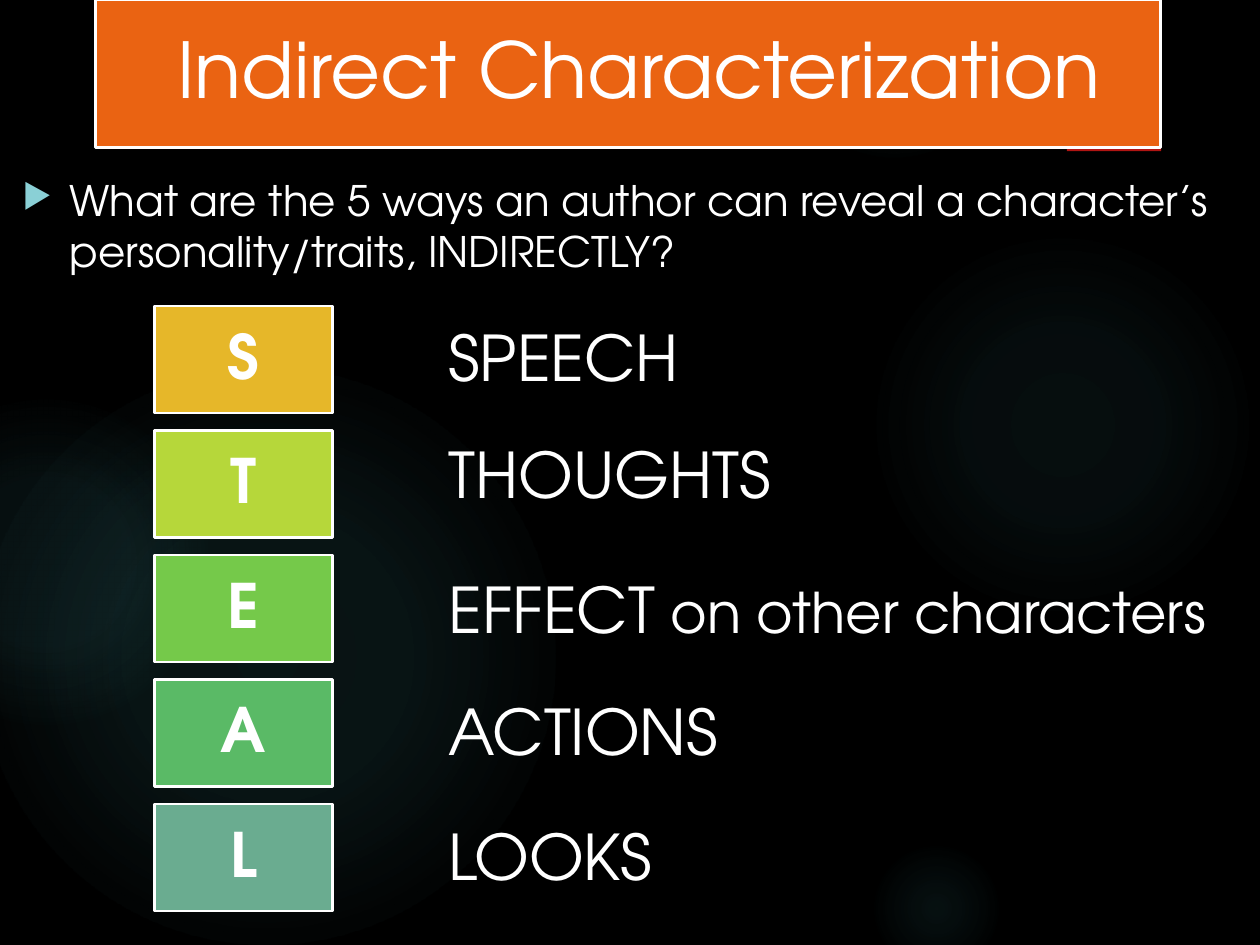
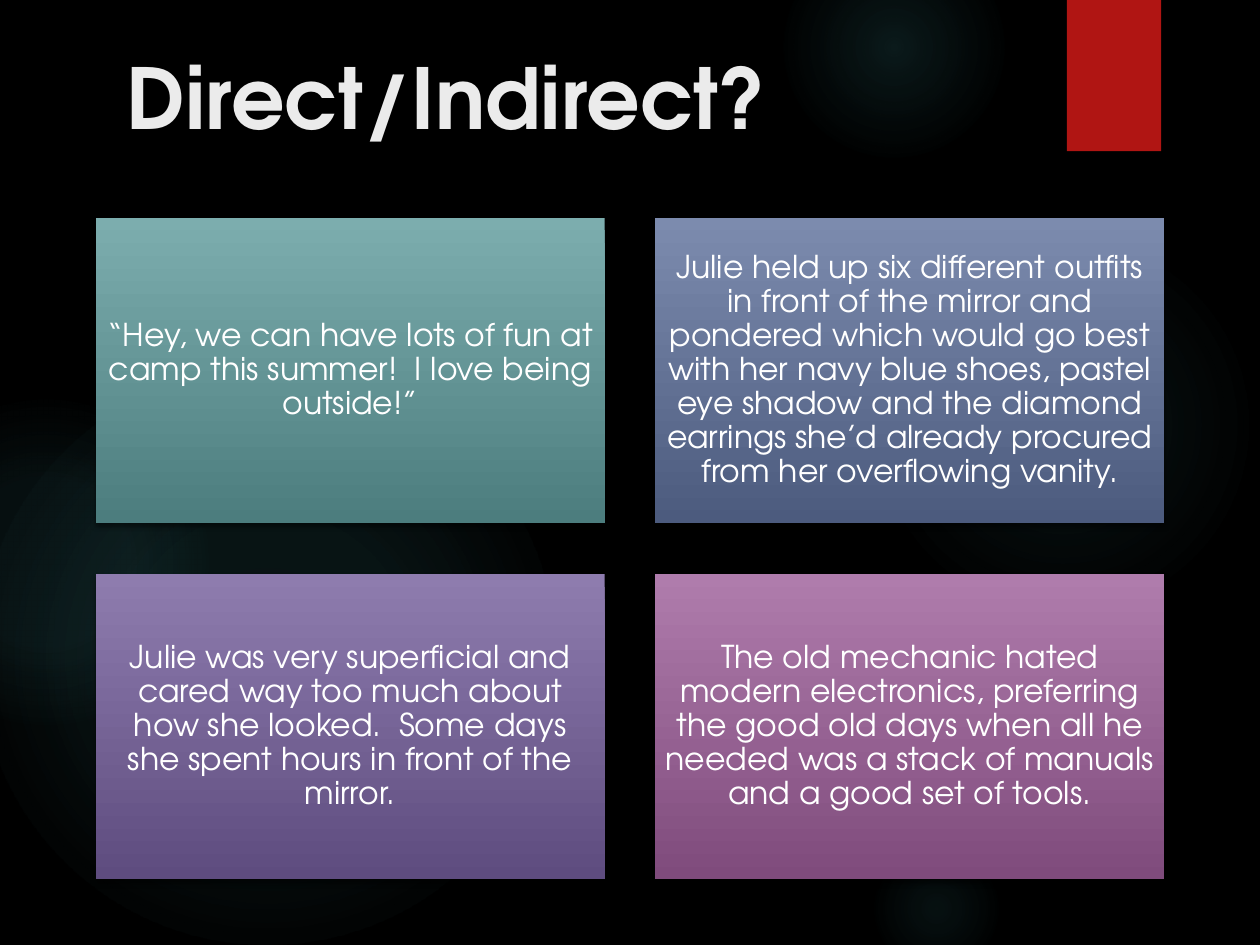
from pptx import Presentation
from pptx.dml.color import RGBColor
from pptx.enum import shapes, text
from pptx.oxml import parse_xml
from pptx.oxml import ns
from pptx.util import Cm, Pt

FACE = "TeX Gyre Adventor"
BLACK = RGBColor(0x00, 0x00, 0x00)
WHITE = RGBColor(0xFF, 0xFF, 0xFF)
PALE = RGBColor(0xEB, 0xEB, 0xEB)
AQUA = RGBColor(0x8A, 0xD0, 0xD6)
GLOW = RGBColor(0x50, 0xB9, 0xC1)
RED = RGBColor(0xB0, 0x15, 0x13)
ORANGE = RGBColor(0xEA, 0x63, 0x12)
GOLD = RGBColor(0xE6, 0xB7, 0x29)
LIME = RGBColor(0xB6, 0xD7, 0x3A)
GREEN = RGBColor(0x75, 0xC9, 0x4A)
JADE = RGBColor(0x5A, 0xBA, 0x66)
SAGE = RGBColor(0x6A, 0xAC, 0x90)
TEAL = RGBColor(0x7C, 0xAD, 0xAE), RGBColor(0x4C, 0x7D, 0x7E)
BLUE = RGBColor(0x7C, 0x8B, 0xAE), RGBColor(0x4C, 0x5B, 0x7E)
VIOLET = RGBColor(0x8E, 0x7C, 0xAE), RGBColor(0x5E, 0x4C, 0x7F)
PINK = RGBColor(0xAF, 0x7C, 0xAC), RGBColor(0x7F, 0x4B, 0x7C)

GLOWS = [
    (17.5, 4.65, 7.82, [(0, 7), (36, 6), (69, 0)]),
    (15.8, -1.27, 4.45, [(0, 14), (36, 7), (73, 0)]),
    (17.5, 16.94, 2.74, [(0, 9), (36, 5), (66, 0)]),
    (-0.43, 7.42, 11.63, [(0, 11), (36, 10), (75, 0)]),
    (-2.34, 8.05, 6.55, [(0, 8), (36, 8), (72, 0)]),
]
STEAL = [
    ("S", GOLD, "SPEECH", "", 6.3),
    ("T", LIME, "THOUGHTS", "", 8.66),
    ("E", GREEN, "EFFECT", " on other characters", 11.38),
    ("A", JADE, "ACTIONS", "", 13.84),
    ("L", SAGE, "LOOKS", "", 16.36),
]
QUOTES = [
    (TEAL, "“Hey, we can have lots of fun at camp this summer!  "
           "I love being outside!”"),
    (BLUE, "Julie held up six different outfits in front of the mirror and "
           "pondered which would go best with her navy blue shoes, pastel "
           "eye shadow and the diamond earrings she’d already procured "
           "from her overflowing vanity."),
    (VIOLET, "Julie was very superficial and cared way too much about how "
             "she looked.  Some days she spent hours in front of the mirror."),
    (PINK, "The old mechanic hated modern electronics, preferring the good "
           "old days when all he needed was a stack of manuals and a good "
           "set of tools."),
]


def style(run, size, color=WHITE, bold=False):
    """Set the face, size and colour of a run."""
    font = run.font
    font.name, font.size, font.bold = FACE, Pt(size), bold
    font.color.rgb = color


def shape(slide, box, fill=None, kind=shapes.MSO_SHAPE.RECTANGLE):
    """Add a flat shape without an outline."""
    item = slide.shapes.add_shape(kind, *map(Cm, box))
    item.shadow.inherit = False
    item.line.fill.background()
    if fill is not None:
        item.fill.solid()
        item.fill.fore_color.rgb = fill
    return item


def frame(item, inset):
    """Put white-outlined or plain shape text in the middle."""
    body = item.text_frame
    body.word_wrap = True
    body.vertical_anchor = text.MSO_ANCHOR.MIDDLE
    body.margin_left = body.margin_right = Cm(inset)
    body.margin_top = body.margin_bottom = Cm(inset)
    return body


def label(item, words, size, inset, bold=False):
    """Write centred words on a shape."""
    body = frame(item, inset)
    body.text = words
    para = body.paragraphs[0]
    para.alignment = text.PP_ALIGN.CENTER
    para.line_spacing = 0.9
    style(para.runs[0], size, bold=bold)
    return body


def note(slide, box, words, size, color=WHITE, bold=False):
    """Add a wrapped text box and return its paragraph."""
    body = slide.shapes.add_textbox(*map(Cm, box)).text_frame
    body.word_wrap = True
    body.text = words
    para = body.paragraphs[0]
    style(para.runs[0], size, color, bold)
    return para


def outline(item):
    """Draw a white edge round a shape."""
    item.line.color.rgb = WHITE
    item.line.width = Pt(1.5)


def shade(item):
    """Drop a soft shadow below a shape."""
    effect = item._element.spPr.find(ns.qn("a:effectLst"))
    effect.append(parse_xml(
        f'<a:outerShdw {ns.nsdecls("a")} blurRad="{Pt(3)}" dist="{Pt(2)}" '
        f'dir="5400000" rotWithShape="0"><a:srgbClr val="{BLACK}">'
        '<a:alpha val="45000"/></a:srgbClr></a:outerShdw>'))


def glow(slide, left, top, size, stops):
    """Add a round light that fades outward."""
    disc = shape(slide, (left, top, size, size), kind=shapes.MSO_SHAPE.OVAL)
    disc.fill.gradient()
    marks = "".join(
        f'<a:gs pos="{pos * 1000}"><a:srgbClr val="{GLOW}">'
        f'<a:alpha val="{alpha * 1000}"/></a:srgbClr></a:gs>'
        for pos, alpha in stops)
    props = disc._element.spPr
    props.replace(props.find(ns.qn("a:gradFill")), parse_xml(
        f'<a:gradFill {ns.nsdecls("a")}><a:gsLst>{marks}</a:gsLst>'
        '<a:path path="circle"><a:fillToRect l="50000" t="50000" '
        'r="50000" b="50000"/></a:path></a:gradFill>'))


def base(deck):
    """Add a black slide with lights and a red ribbon."""
    slide = deck.slides.add_slide(deck.slide_layouts[6])
    slide.background.fill.solid()
    slide.background.fill.fore_color.rgb = BLACK
    for spot in GLOWS:
        glow(slide, *spot)
    shade(shape(slide, (21.51, 0, 1.9, 3.05), RED))
    return slide


def prompt(slide, box, words):
    """Add the question with its arrow bullet."""
    para = note(slide, box, words, 24)
    para.space_before = Pt(10)
    props = para._p.get_or_add_pPr()
    props.set("marL", str(Cm(0.95)))
    props.set("indent", str(-Cm(0.95)))
    for mark in (f'buClr {{}}><a:srgbClr val="{AQUA}"/></a:buClr>',
                 'buSzPct {} val="80000"/>', 'buChar {} char="▶"/>'):
        props.append(parse_xml("<a:" + mark.format(ns.nsdecls("a"))))


def banner(slide, box, words):
    """Add the orange title band."""
    band = shape(slide, box, ORANGE)
    outline(band)
    label(band, words, 44, 0.61).margin_left = Cm(1.07)


def steal(slide, box, step):
    """Stack the letter tiles and set each word beside its tile."""
    left, top, wide, high = box
    for row, (letter, color, word, rest, line) in enumerate(STEAL):
        tile = shape(slide, (left, top + row * step, wide, high), color)
        outline(tile)
        label(tile, letter, 35, 0.38, True)
        span = 16.61 if rest else 11.91
        para = note(slide, (left + 5.67, line, span, 1.8), word, 36)
        if rest:
            run = para.add_run()
            run.text = rest
            style(run, 32)


def quotes(slide, box, gap):
    """Fill a two-by-two grid with shaded quote cards."""
    left, top, wide, high = box
    across, down = (wide - gap) / 2, (high - gap) / 2
    for spot, (tones, words) in enumerate(QUOTES):
        row, col = divmod(spot, 2)
        card = shape(slide, (left + col * (across + gap),
                             top + row * (down + gap), across, down))
        card.fill.gradient()
        card.fill.gradient_angle = 270
        for stop, tone in zip(card.fill.gradient_stops, tones):
            stop.color.rgb = tone
        shade(card)
        label(card, words, 18, 0.18)


def main():
    """Build both slides and save them."""
    deck = Presentation()
    deck.slide_width, deck.slide_height = Cm(25.4), Cm(19.05)
    first = base(deck)
    prompt(first, (0.2, 3.4, 24.89, 11.66),
           "What are the 5 ways an author can reveal a character’s "
           "personality/traits, INDIRECTLY?")
    banner(first, (1.93, 0, 21.46, 2.97), "Indirect Characterization")
    steal(first, (3.12, 6.17, 3.58, 2.16), 2.51)
    second = base(deck)
    note(second, (2.31, 0.79, 19.61, 3.89), "Direct/Indirect?", 48, PALE, True)
    quotes(second, (1.93, 4.39, 21.54, 13.34), 1.02)
    deck.save("out.pptx")


if __name__ == "__main__":
    main()
